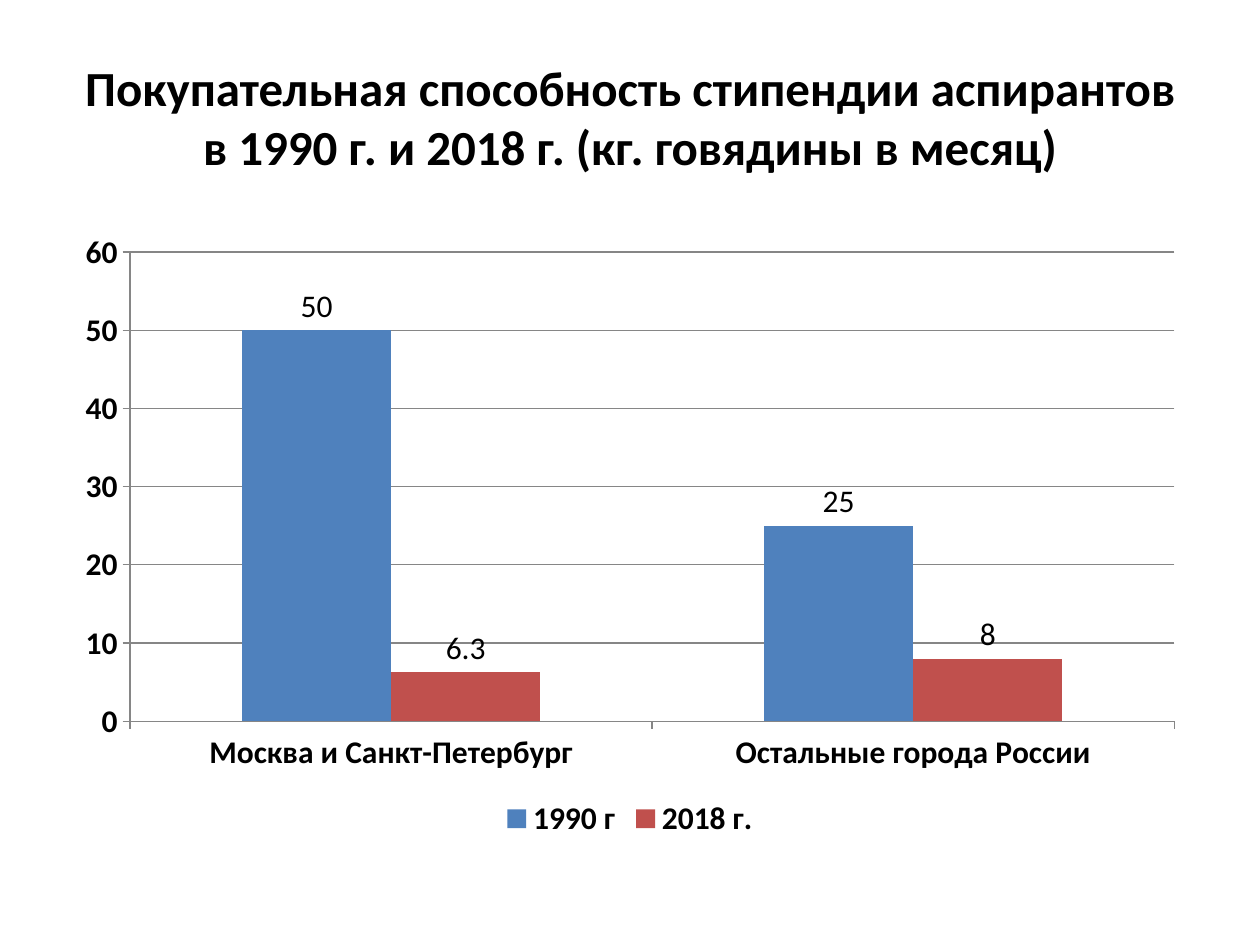
import pptx
import pptx.chart.data
import pptx.dml.color
import pptx.enum.chart
import pptx.enum.text
import pptx.util
from pptx.util import Inches


def color(hex_code):
    return pptx.dml.color.RGBColor.from_string(hex_code)


def format_font(font, size=18, bold=False, fill="000000", name="Calibri"):
    font.name = name
    font.size = pptx.util.Pt(size)
    font.bold = bold
    font.color.rgb = color(fill)


def add_text(p, text, align=pptx.enum.text.PP_ALIGN.LEFT, **style):
    p.alignment = align
    r = p.add_run()
    r.text = text
    format_font(r.font, **style)


class SlideBuilder:
    line_color = "868686"

    def __init__(self, prs):
        self.s = prs.slides.add_slide(prs.slide_layouts[6])

    def title(self, text, x, y, w, h):
        sp = self.s.shapes.add_textbox(x, y, w, h)
        tf = sp.text_frame
        tf.word_wrap = True
        tf.vertical_anchor = pptx.enum.text.MSO_ANCHOR.MIDDLE
        add_text(tf.paragraphs[0], text, size=28, bold=True,
                 align=pptx.enum.text.PP_ALIGN.CENTER)

    def column_chart(self, categories, series, x, y, w, h):
        data = pptx.chart.data.CategoryChartData()
        data.categories = categories
        for name, values, _ in series:
            data.add_series(name, values)
        chart = self.s.shapes.add_chart(
            pptx.enum.chart.XL_CHART_TYPE.COLUMN_CLUSTERED, x, y, w, h, data).chart
        format_font(chart.font)
        chart.has_title = False

        # Columns and value labels
        plot = chart.plots[0]
        plot.gap_width = 150
        plot.overlap = 0
        plot.vary_by_categories = False
        for column, (_, _, fill) in zip(plot.series, series):
            column.format.fill.solid()
            column.format.fill.fore_color.rgb = color(fill)
            column.invert_if_negative = False
            labels = column.data_labels
            labels.show_value = True
            labels.position = pptx.enum.chart.XL_LABEL_POSITION.OUTSIDE_END
            format_font(labels.font)

        # Axes and gridlines
        for axis in (chart.category_axis, chart.value_axis):
            format_font(axis.tick_labels.font, bold=True)
            axis.major_tick_mark = pptx.enum.chart.XL_TICK_MARK.OUTSIDE
            self.line(axis.format.line)
        chart.value_axis.has_major_gridlines = True
        self.line(chart.value_axis.major_gridlines.format.line)
        chart.value_axis.minimum_scale = 0
        chart.value_axis.maximum_scale = 60
        chart.value_axis.major_unit = 10

        # Legend
        chart.has_legend = True
        chart.legend.position = pptx.enum.chart.XL_LEGEND_POSITION.BOTTOM
        chart.legend.include_in_layout = False
        format_font(chart.legend.font, bold=True)

    def line(self, line):
        line.color.rgb = color(self.line_color)
        line.width = pptx.util.Pt(0.75)


def main():
    prs = pptx.Presentation()
    prs.slide_width, prs.slide_height = Inches(10), Inches(7.5)
    slide = SlideBuilder(prs)
    left, width = Inches(0.5), Inches(9)

    # Heading
    slide.title("Покупательная способность стипендии аспирантов "
                "в 1990 г. и 2018 г. (кг. говядины в месяц)",
                left, Inches(0.3), width, Inches(1.25))

    # Purchasing power by city group
    slide.column_chart(
        ["Москва и Санкт-Петербург", "Остальные города России"],
        [("1990 г", (50, 25), "4F81BD"), ("2018 г.", (6.3, 8), "C0504D")],
        left, Inches(1.75), width, Inches(4.95))

    prs.save("out.pptx")


if __name__ == "__main__":
    main()
